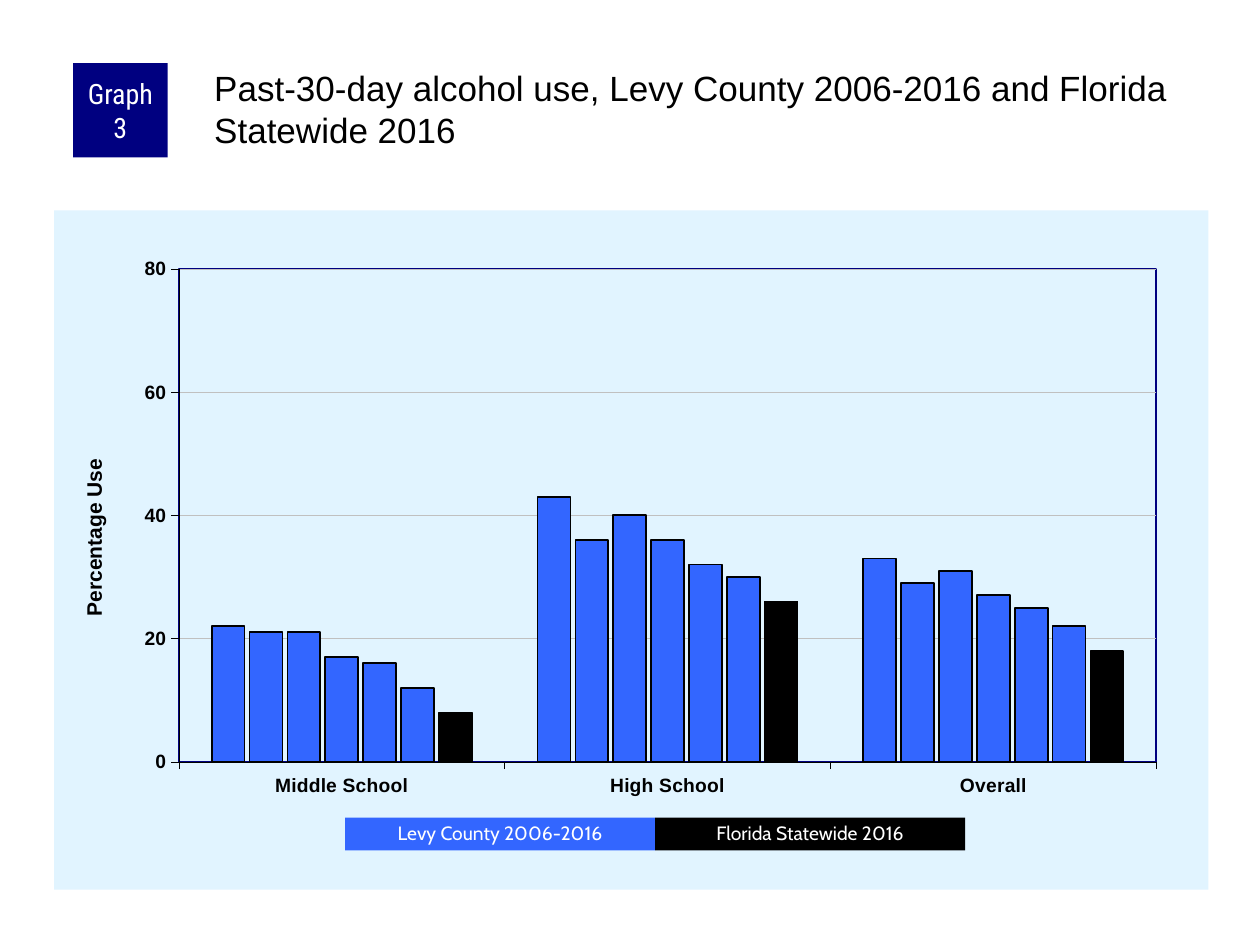
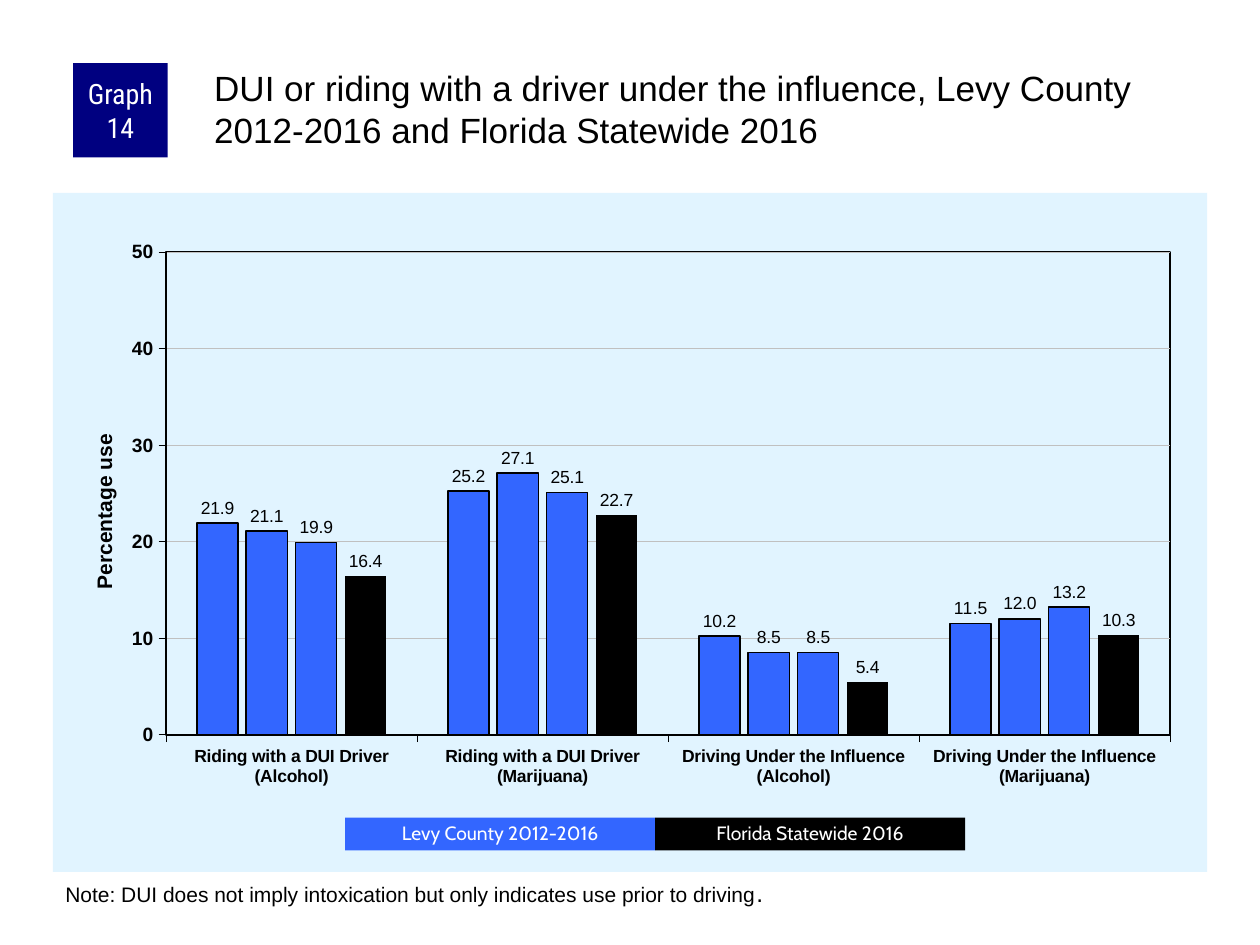
import pptx
import pptx.util
import pptx.oxml
import pptx.oxml.ns
import pptx.chart.data
import pptx.dml.color
import pptx.enum.chart
import pptx.enum.shapes
import pptx.enum.text

Inches, Pt = pptx.util.Inches, pptx.util.Pt
qn = pptx.oxml.ns.qn

COLORS = {
    "navy": "000080",
    "county": "3366FF",
    "state": "000000",
    "panel": "E1F4FF",
    "grid": "C0C0C0",
    "ink": "000000",
    "paper": "FFFFFF",
}
BODY, BADGE, KEY = "Arial", "Roboto Condensed", "Cabin"
STATE_KEY = "Florida Statewide 2016"

GRAPHS = [
    {
        "badge": "Graph 3",
        "title": "Past-30-day alcohol use, Levy County 2006-2016 and Florida Statewide 2016",
        "county_key": "Levy County 2006-2016",
        "note": [],
        "panel": (0.43, 1.67, 9.16, 5.39),
        "plot": (0.108, 0.086, 0.847, 0.726),
        "plot_border": "navy",
        "axis_title": "Percentage Use",
        "axis_title_at": (0.02, 0.36),
        "top": 80, "step": 20,
        "gap": 200, "overlap": -15,
        "font": 8, "category_font": 11,
        "labels": False,
        "categories": ["Middle School", "High School", "Overall"],
        "columns": [
            ((22, 43, 33), 1),
            ((21, 36, 29), 1),
            ((21, 40, 31), 1),
            ((17, 36, 27), 1),
            ((16, 32, 25), 1),
            ((12, 30, 22), 1),
            ((8, 26, 18), 1),
        ],
    },
    {
        "badge": "Graph 14",
        "title": "DUI or riding with a driver under the influence, "
                 "Levy County 2012-2016 and Florida Statewide 2016",
        "county_key": "Levy County 2012-2016",
        "note": [
            ("Note: DUI does not imply intoxication but only indicates use prior to driving", 12),
            (".", 14),
        ],
        "panel": (0.42, 1.53, 9.16, 5.39),
        "plot": (0.098, 0.087, 0.87, 0.711),
        "plot_border": "ink",
        "axis_title": "Percentage use",
        "axis_title_at": (0.03, 0.35),
        "top": 50, "step": 10,
        "gap": 150, "overlap": -20,
        "font": 11.5, "category_font": 10,
        "labels": True,
        "categories": [
            "Riding with a DUI Driver (Alcohol)",
            "Riding with a DUI Driver (Marijuana)",
            "Driving Under the Influence (Alcohol)",
            "Driving Under the Influence (Marijuana)",
        ],
        "columns": [
            ((21.9, 25.2, 10.2, 11.5), 1),
            ((21.1, 27.1, 8.5, 12.0), 1),
            ((19.9, 25.1, 8.5, 13.2), 0.75),
            ((16.4, 22.7, 5.4, 10.3), 0),
        ],
    },
]


def rgb(name):
    return pptx.dml.color.RGBColor.from_string(COLORS[name])


def set_font(font, face, size, color, bold=False):
    font.name, font.size, font.bold = face, Pt(size), bold
    font.color.rgb = rgb(color)


def set_line(line, color, width):
    if width:
        line.color.rgb = rgb(color)
        line.width = Pt(width)
    else:
        line.fill.background()


def write(frame, runs, face, color, insets=None, centred=False, spacing=None):
    frame.word_wrap = True
    if insets:
        (frame.margin_left, frame.margin_top,
         frame.margin_right, frame.margin_bottom) = map(Inches, insets)
    paragraph = frame.paragraphs[0]
    if centred:
        frame.vertical_anchor = pptx.enum.text.MSO_ANCHOR.MIDDLE
        paragraph.alignment = pptx.enum.text.PP_ALIGN.CENTER
    if spacing:
        paragraph.line_spacing = spacing
    for text, size in runs:
        run = paragraph.add_run()
        run.text = text
        set_font(run.font, face, size, color)


def add_block(slide, at, fill, text, size, face, **style):
    block = slide.shapes.add_shape(
        pptx.enum.shapes.MSO_SHAPE.RECTANGLE, *map(Inches, at))
    block.shadow.inherit = False
    block.fill.solid()
    block.fill.fore_color.rgb = rgb(fill)
    block.line.fill.background()
    write(block.text_frame, [(text, size)], face, "paper", centred=True, **style)


def add_text(slide, at, runs, insets=None):
    box = slide.shapes.add_textbox(*map(Inches, at))
    write(box.text_frame, runs, BODY, "ink", insets)


def chart_xml(body):
    return pptx.oxml.parse_xml(body.replace(
        ">", f" {pptx.oxml.ns.nsdecls('c', 'a')}>", 1))


def layout_xml(target="", **fractions):
    modes = "".join(f'<c:{key}Mode val="edge"/>' for key in "xy")
    values = "".join(f'<c:{key} val="{value}"/>' for key, value in fractions.items())
    return chart_xml(
        f"<c:layout><c:manualLayout>{target}{modes}{values}</c:manualLayout></c:layout>")


def drop_layout(parent):
    for layout in parent.findall(qn("c:layout")):
        parent.remove(layout)


def place_chart_parts(chart, graph):
    space = chart.element
    plot_area = space.chart.plotArea
    drop_layout(plot_area)
    plot_area.insert(0, layout_xml(
        '<c:layoutTarget val="inner"/>', **dict(zip("xywh", graph["plot"]))))
    plot_area.append(chart_xml(
        '<c:spPr><a:noFill/><a:ln w="12700"><a:solidFill>'
        f'<a:srgbClr val="{COLORS[graph["plot_border"]]}"/>'
        "</a:solidFill></a:ln></c:spPr>"))
    space.chart.addnext(chart_xml(
        f'<c:spPr><a:solidFill><a:srgbClr val="{COLORS["panel"]}"/></a:solidFill>'
        "<a:ln><a:noFill/></a:ln></c:spPr>"))

    title = plot_area.find(qn("c:valAx")).find(qn("c:title"))
    drop_layout(title)
    title.find(qn("c:tx")).addnext(
        layout_xml(**dict(zip("xy", graph["axis_title_at"]))))


def style_axes(chart, graph):
    for axis, size in ((chart.category_axis, graph["category_font"]),
                       (chart.value_axis, 11)):
        axis.major_tick_mark = pptx.enum.chart.XL_TICK_MARK.OUTSIDE
        axis.minor_tick_mark = pptx.enum.chart.XL_TICK_MARK.NONE
        set_font(axis.tick_labels.font, BODY, size, "ink", bold=True)
        set_line(axis.format.line, "ink", 0.25)

    scale = chart.value_axis
    scale.minimum_scale, scale.maximum_scale = 0, graph["top"]
    scale.major_unit = graph["step"]
    scale.has_major_gridlines = True
    set_line(scale.major_gridlines.format.line, "grid", 0.25)
    run = scale.axis_title.text_frame.paragraphs[0].add_run()
    run.text = graph["axis_title"]
    set_font(run.font, BODY, 12, "ink", bold=True)


def style_columns(chart, graph):
    plot = chart.plots[0]
    plot.gap_width, plot.overlap = graph["gap"], graph["overlap"]
    plot.vary_by_categories = False
    last = len(graph["columns"]) - 1
    for index, (series, (_, border)) in enumerate(zip(plot.series, graph["columns"])):
        series.invert_if_negative = False
        series.format.fill.solid()
        series.format.fill.fore_color.rgb = rgb("state" if index == last else "county")
        set_line(series.format.line, "ink", border)
        if graph["labels"]:
            labels = series.data_labels
            labels.show_value = True
            labels.number_format = "0.0"
            labels.number_format_is_linked = False
            labels.position = pptx.enum.chart.XL_LABEL_POSITION.OUTSIDE_END
            set_font(labels.font, BODY, 10, "ink")


def add_graph(slide, graph):
    data = pptx.chart.data.CategoryChartData()
    data.categories = graph["categories"]
    for number, (values, _) in enumerate(graph["columns"], 1):
        data.add_series(f"Series {number}", values)
    chart = slide.shapes.add_chart(
        pptx.enum.chart.XL_CHART_TYPE.COLUMN_CLUSTERED,
        *map(Inches, graph["panel"]), data).chart
    chart.has_title = chart.has_legend = False
    set_font(chart.font, BODY, graph["font"], "ink")
    style_axes(chart, graph)
    style_columns(chart, graph)
    place_chart_parts(chart, graph)


def build_slide(deck, graph):
    slide = deck.slides.add_slide(deck.slide_layouts[6])
    add_graph(slide, graph)
    add_block(slide, (0.58, 0.5, 0.75, 0.75), "navy", graph["badge"], 16, BADGE,
              insets=(0.05, 0, 0.05, 0))
    add_text(slide, (1.67, 0.5, 7.92, 0.83), [(graph["title"], 20)],
             (0.03, 0.03, 0, 0))
    if graph["note"]:
        add_text(slide, (0.42, 6.92, 9.17, 0.34), graph["note"])
    keys = (("county", graph["county_key"]), ("state", STATE_KEY))
    key_width = 2.46
    for index, (fill, text) in enumerate(keys):
        add_block(slide, (2.74 + index * key_width, 6.49, key_width, 0.26),
                  fill, text, 11, KEY, spacing=0.9)


def main():
    deck = pptx.Presentation()
    deck.slide_width, deck.slide_height = Inches(10), Inches(7.5)
    for graph in GRAPHS:
        build_slide(deck, graph)
    deck.save("out.pptx")


if __name__ == "__main__":
    main()
